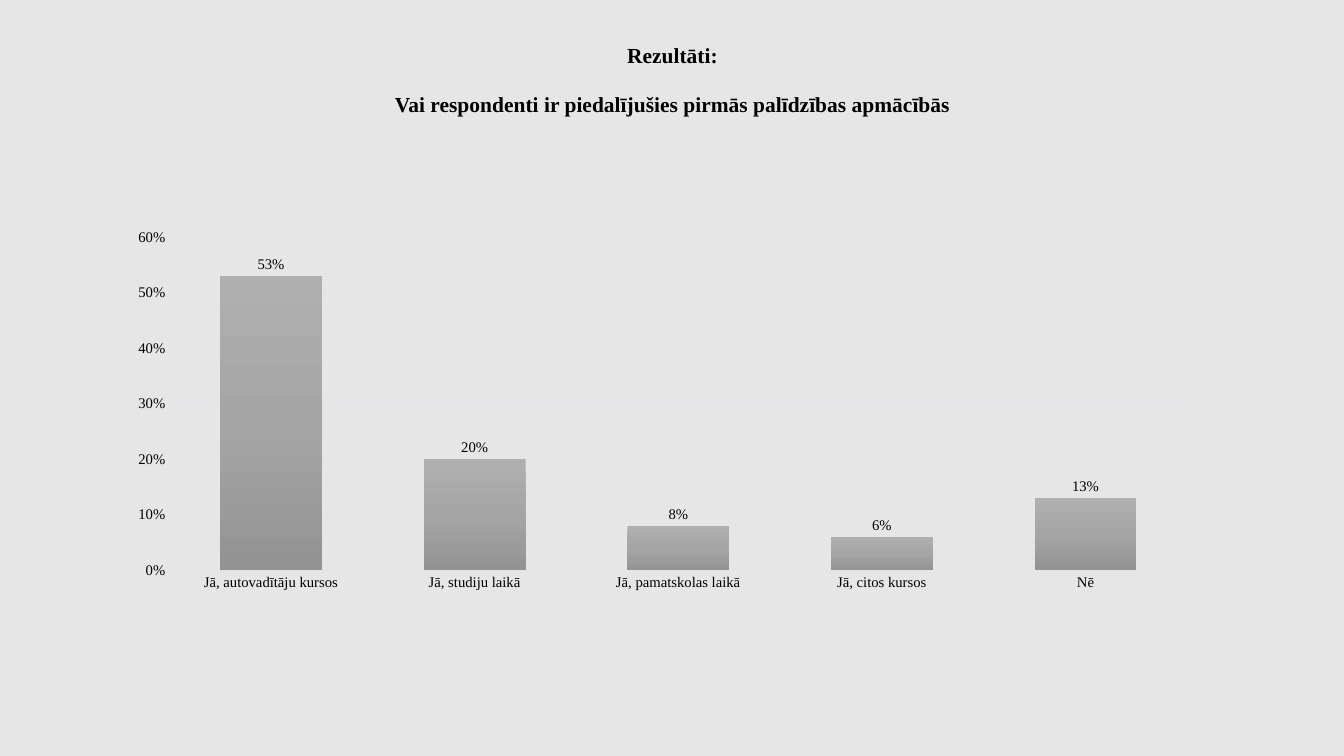
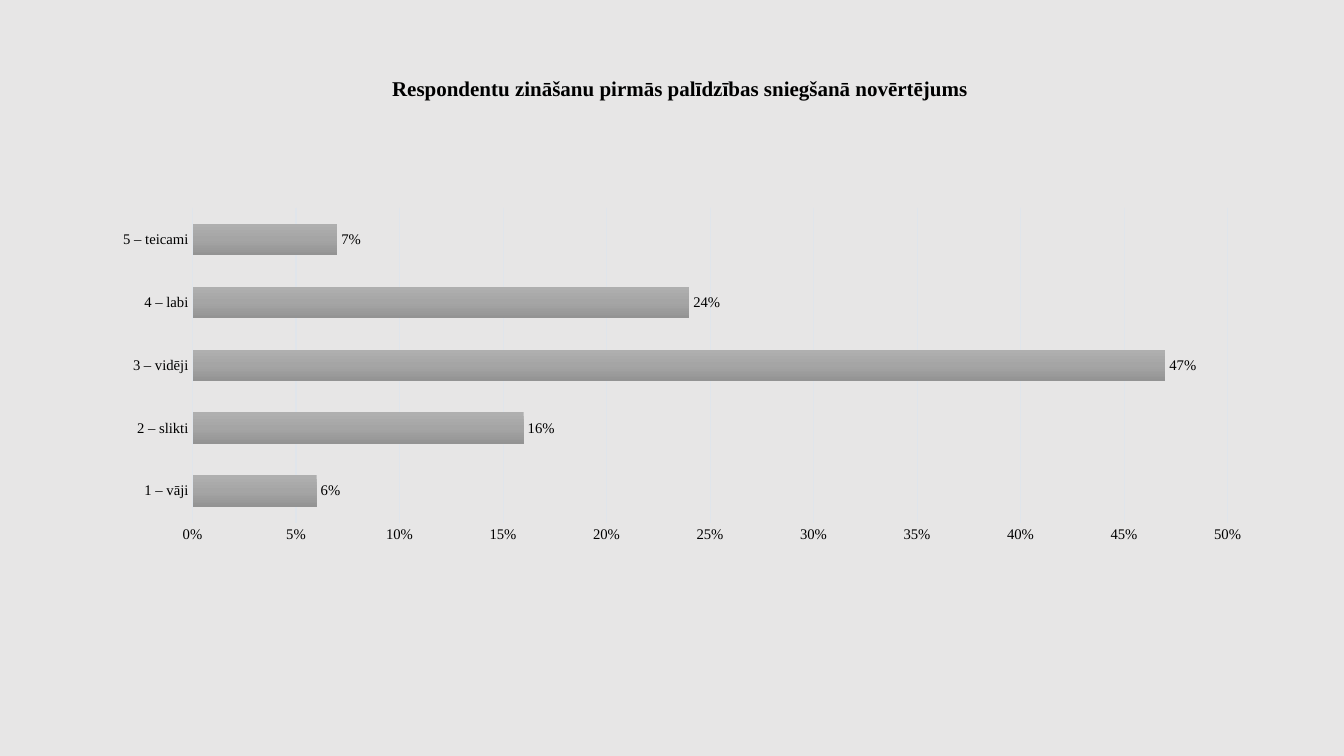
from dataclasses import dataclass

from pptx import Presentation
from pptx.chart.data import CategoryChartData
from pptx.dml.color import RGBColor
from pptx.enum.chart import XL_CHART_TYPE, XL_LABEL_POSITION, XL_TICK_MARK
from pptx.enum.text import MSO_ANCHOR, MSO_AUTO_SIZE, PP_ALIGN
from pptx.oxml import parse_xml
from pptx.oxml.ns import nsdecls
from pptx.util import Inches, Pt

COLUMN = XL_CHART_TYPE.COLUMN_CLUSTERED
BAR = XL_CHART_TYPE.BAR_CLUSTERED
OUTSIDE_END = XL_LABEL_POSITION.OUTSIDE_END
NO_TICK = XL_TICK_MARK.NONE
TOP = MSO_ANCHOR.TOP
NO_AUTOFIT = MSO_AUTO_SIZE.NONE
CENTER = PP_ALIGN.CENTER

FONT = "Times New Roman"
PERCENT = "0%"
TITLE_ONLY = 5
LEFT = 0.92
COLORS = {"background": "E7E6E6", "text": "000000", "grid": "E0E5EB"}
BAR_GRADIENT = ((0, "AFAFAF"), (50, "A5A5A5"), (100, "939393"))


@dataclass(frozen=True)
class ChartSlide:
    title: tuple[str, ...]
    title_size: float
    title_top_margin: float
    title_left_margin: float
    kind: int
    width: float
    height: float
    plot: tuple[float, float, float, float]
    values: dict[str, float]
    maximum: float
    step: float
    overlap: int = 0


SLIDES = (
    ChartSlide(
        title=("Rezultāti:", "Vai respondenti ir piedalījušies pirmās palīdzības apmācībās"),
        title_size=15.3,
        title_top_margin=0.05,
        title_left_margin=0.1,
        kind=COLUMN,
        width=11.5,
        height=4.76,
        plot=(0.066, 0.075, 0.878, 0.694),
        values={
            "Jā, autovadītāju kursos": 0.53,
            "Jā, studiju laikā": 0.20,
            "Jā, pamatskolas laikā": 0.08,
            "Jā, citos kursos": 0.06,
            "Nē": 0.13,
        },
        maximum=0.6,
        step=0.1,
        overlap=-24,
    ),
    ChartSlide(
        title=("Respondentu zināšanu pirmās palīdzības sniegšanā novērtējums",),
        title_size=15,
        title_top_margin=0.38,
        title_left_margin=0.25,
        kind=BAR,
        width=11.64,
        height=3.46,
        plot=(0.085, 0.018, 0.882, 0.903),
        values={
            "1 – vāji": 0.06,
            "2 – slikti": 0.16,
            "3 – vidēji": 0.47,
            "4 – labi": 0.24,
            "5 – teicami": 0.07,
        },
        maximum=0.5,
        step=0.05,
    ),
)


def color(name: str) -> RGBColor:
    return RGBColor.from_string(COLORS[name])


def style_font(font, size: float, bold: bool = False) -> None:
    font.name = FONT
    font.size = Pt(size)
    font.bold = bold
    font.color.rgb = color("text")


def style_line(line) -> None:
    line.color.rgb = color("grid")
    line.width = Pt(0.75)


def add_title(slide, content: ChartSlide) -> None:
    title = slide.shapes.title
    title.left, title.top = Inches(LEFT), Inches(0.4)
    title.width, title.height = Inches(11.5), Inches(1.45)
    frame = title.text_frame
    frame.auto_size = NO_AUTOFIT
    frame.word_wrap = True
    frame.vertical_anchor = TOP
    frame.margin_top = Inches(content.title_top_margin)
    frame.margin_left = Inches(content.title_left_margin)
    frame.text = "\n".join(content.title)
    for index, paragraph in enumerate(frame.paragraphs):
        paragraph.alignment = CENTER
        paragraph.line_spacing = 0.9
        paragraph.space_before = Pt(18 if index else 0)
        style_font(paragraph.font, content.title_size, bold=True)


def fill_with_gradient(series) -> None:
    stops = "".join(
        f'<a:gs pos="{position * 1000}"><a:srgbClr val="{value}"/></a:gs>'
        for position, value in BAR_GRADIENT
    )
    gradient = parse_xml(
        f'<a:gradFill {nsdecls("a")} rotWithShape="1"><a:gsLst>{stops}</a:gsLst>'
        '<a:lin ang="5400000" scaled="0"/></a:gradFill>'
    )
    series._element.get_or_add_spPr().insert(0, gradient)


def set_plot_layout(chart, plot: tuple[float, float, float, float]) -> None:
    plot_area = chart._chartSpace.chart.plotArea
    for layout in plot_area.findall("{*}layout"):
        plot_area.remove(layout)
    sizes = "".join(f'<c:{name} val="{value}"/>' for name, value in zip("xywh", plot))
    plot_area.insert(0, parse_xml(
        f'<c:layout {nsdecls("c")}><c:manualLayout><c:layoutTarget val="inner"/>'
        f'<c:xMode val="edge"/><c:yMode val="edge"/>{sizes}</c:manualLayout></c:layout>'
    ))


def add_chart(slide, content: ChartSlide) -> None:
    data = CategoryChartData(number_format=PERCENT)
    data.categories = list(content.values)
    data.add_series("Series 1", list(content.values.values()))
    chart = slide.shapes.add_chart(
        content.kind, Inches(LEFT), Inches(2),
        Inches(content.width), Inches(content.height), data,
    ).chart
    chart.has_title = False
    chart.has_legend = False
    style_font(chart.font, 10.5)
    set_plot_layout(chart, content.plot)

    for axis in (chart.category_axis, chart.value_axis):
        axis.major_tick_mark = NO_TICK
        axis.minor_tick_mark = NO_TICK
        style_font(axis.tick_labels.font, 10.5)
    chart.category_axis.has_major_gridlines = False
    style_line(chart.category_axis.format.line)

    value_axis = chart.value_axis
    value_axis.minimum_scale = 0
    value_axis.maximum_scale = content.maximum
    value_axis.major_unit = content.step
    value_axis.format.line.fill.background()
    value_axis.has_major_gridlines = True
    style_line(value_axis.major_gridlines.format.line)
    value_axis.tick_labels.number_format = PERCENT
    value_axis.tick_labels.number_format_is_linked = False

    plot = chart.plots[0]
    plot.vary_by_categories = False
    plot.gap_width = 100
    plot.overlap = content.overlap
    fill_with_gradient(plot.series[0])
    plot.has_data_labels = True
    labels = plot.data_labels
    labels.show_value = True
    labels.position = OUTSIDE_END
    labels.number_format = PERCENT
    labels.number_format_is_linked = False
    style_font(labels.font, 10.5)


def main() -> None:
    presentation = Presentation()
    presentation.slide_width = Inches(13.33)
    presentation.slide_height = Inches(7.5)
    background = presentation.slide_master.background.fill
    background.solid()
    background.fore_color.rgb = color("background")
    for content in SLIDES:
        slide = presentation.slides.add_slide(presentation.slide_layouts[TITLE_ONLY])
        add_title(slide, content)
        add_chart(slide, content)
    presentation.save("out.pptx")


if __name__ == "__main__":
    main()
